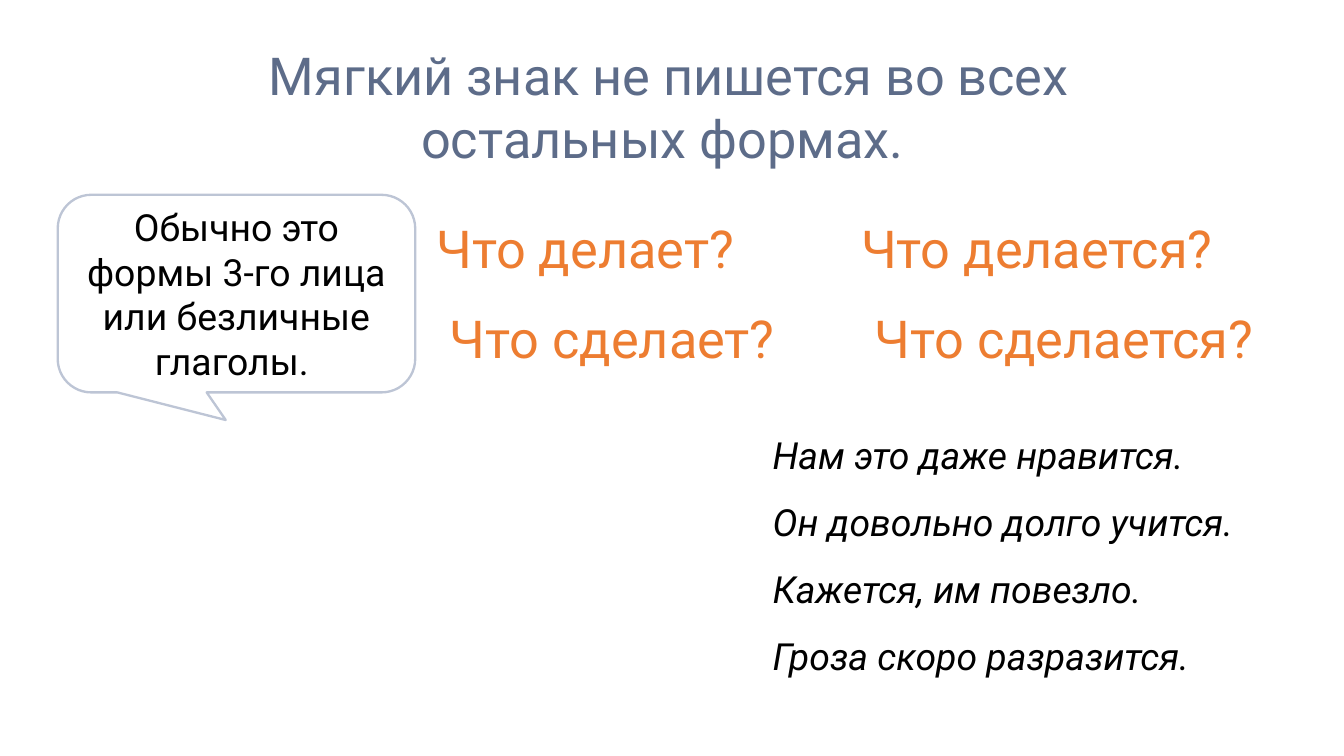
from lxml import etree
from pptx import Presentation
from pptx import util as u
from pptx.dml.color import RGBColor
from pptx.enum import shapes, text
from pptx.oxml import ns

SLATE = RGBColor(0x5D, 0x6C, 0x89)
ORANGE = RGBColor(0xED, 0x7D, 0x31)
NAVY = RGBColor(0x00, 0x20, 0x60)
BLACK = RGBColor(0x00, 0x00, 0x00)
WHITE = RGBColor(0xFF, 0xFF, 0xFF)

# Widescreen slide, 16 : 9
WIDTH = 10
HEIGHT = WIDTH * 9 / 16
FONT = "Roboto"

# Question grid: left edge of each column; top, indent and width of each row
COLUMNS = (3.12, 6.28)
ROWS = ((1.42, 0, 3.53), (2.09, 0.1, 3.69))
ROW_HEIGHT = 0.61
QUESTIONS = (
    ("Что делает?", "Что делается?"),
    ("Что сделает?", "Что сделается?"),
)
EXAMPLES = (
    "Нам это даже нравится.",
    "Он довольно долго учится.",
    "Кажется, им повезло.",
    "Гроза скоро разразится.",
)

TITLE_STYLE = {"size": u.Pt(28), "name": FONT}
BODY_STYLE = {"size": u.Pt(20), "name": FONT}
EXAMPLE_STYLE = {**BODY_STYLE, "italic": True}


def inches(*lengths):
    return [u.Inches(length) for length in lengths]


def write(shape, lines, style, color, align=text.PP_ALIGN.LEFT, spacing=1.0):
    frame = shape.text_frame
    frame.word_wrap = True
    frame.vertical_anchor = text.MSO_ANCHOR.MIDDLE
    frame.text = "\n".join(lines)
    for paragraph in frame.paragraphs:
        paragraph.alignment = align
        paragraph.line_spacing = spacing
        font = paragraph.runs[0].font
        for key, value in style.items():
            setattr(font, key, value)
        font.color.rgb = color


def add_text(slide, box, lines, style, color, **layout):
    label = slide.shapes.add_textbox(*inches(*box))
    write(label, lines, style, color, **layout)
    return label


def add_question(slide, box, question):
    card = slide.shapes.add_shape(
        shapes.MSO_SHAPE.ROUNDED_RECTANGLE, *inches(*box))
    card.shadow.inherit = False
    card.fill.background()
    card.line.fill.background()
    write(card, [question], TITLE_STYLE, ORANGE, spacing=1.5)


def add_callout(slide, box, remark):
    callout = slide.shapes.add_shape(
        shapes.MSO_SHAPE.ROUNDED_RECTANGULAR_CALLOUT, *inches(*box))
    for index, value in enumerate((-0.03, 0.64, 0.17)):
        callout.adjustments[index] = value
    callout.shadow.inherit = False
    callout.fill.solid()
    callout.fill.fore_color.rgb = WHITE
    callout.line.color.rgb = NAVY
    callout.line.width = u.Pt(1.25)
    # Outline at 25 % opacity
    outline = callout.line._ln.find(".//" + ns.qn("a:srgbClr"))
    etree.SubElement(outline, ns.qn("a:alpha"), val="25000")
    write(callout, [remark], BODY_STYLE, BLACK, align=text.PP_ALIGN.CENTER)


def main():
    deck = Presentation()
    deck.slide_width, deck.slide_height = inches(WIDTH, HEIGHT)
    slide = deck.slides.add_slide(deck.slide_layouts[6])

    # Rule
    rule = add_text(slide, (0.87, 0.3, 8.21, 0.98),
                    ["Мягкий знак не пишется во всех остальных формах. "],
                    TITLE_STYLE, SLATE, align=text.PP_ALIGN.CENTER)
    rule.text_frame.margin_left = rule.text_frame.margin_right = u.Inches(0.2)

    # Questions
    for (top, indent, width), questions in zip(ROWS, QUESTIONS):
        for left, question in zip(COLUMNS, questions):
            add_question(slide, (left + indent, top, width, ROW_HEIGHT), question)

    # Remark
    add_callout(slide, (0.43, 1.45, 2.66, 1.47),
                "Обычно это формы 3-го лица или безличные глаголы. ")

    # Examples
    add_text(slide, (5.65, 2.82, 3.99, 2.45), EXAMPLES,
             EXAMPLE_STYLE, BLACK, spacing=1.5)

    deck.save("out.pptx")


if __name__ == "__main__":
    main()
